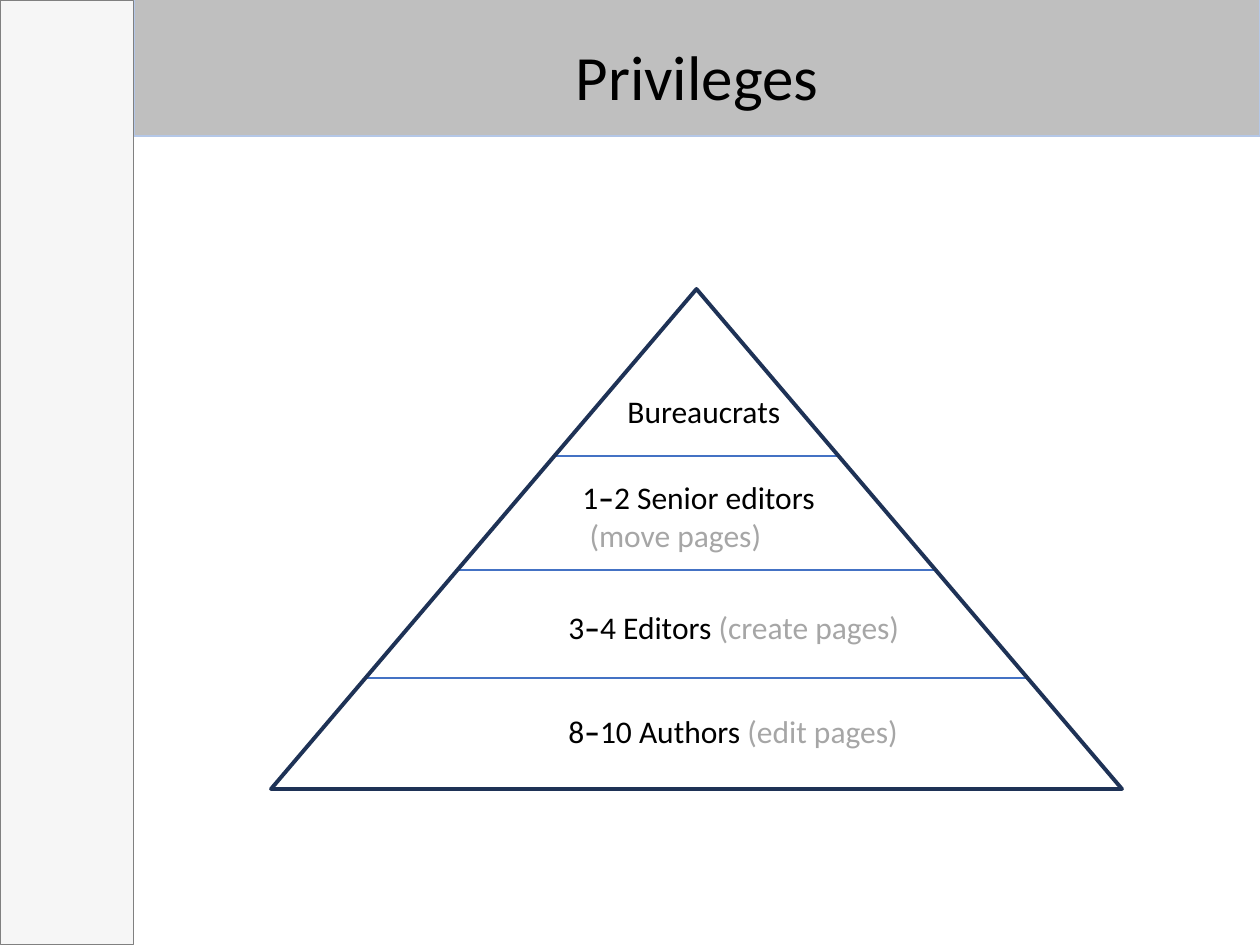
from dataclasses import dataclass

from lxml import etree
from pptx import Presentation
from pptx.dml.color import RGBColor
from pptx.enum.shapes import MSO_CONNECTOR, MSO_SHAPE
from pptx.enum.text import MSO_ANCHOR, MSO_AUTO_SIZE, PP_ALIGN
from pptx.oxml.ns import qn
from pptx.util import Emu, Pt

STRAIGHT = MSO_CONNECTOR.STRAIGHT
RECTANGLE, TRIANGLE = MSO_SHAPE.RECTANGLE, MSO_SHAPE.ISOSCELES_TRIANGLE


@dataclass(frozen=True)
class Theme:
    font: str = "Calibri"
    title_size: int = 36
    label_size: int = 18
    text: str = "000000"
    muted: str = "A6A6A6"
    sidebar: str = "F6F6F6"
    sidebar_edge: str = "808080"
    banner: str = "BFBFBF"
    banner_edge: str = "B4C7E7"
    divider: str = "4472C4"
    pyramid: str = "1E3256"


THEME = Theme()

TITLE = "Privileges"
# Each level: box (left, top, width, height), paragraphs of (role, permission)
LEVELS = [
    ((556, 706, 359, 50), [("8–10 Authors ", "(edit pages)")]),
    ((556, 602, 360, 50), [("3–4 Editors ", "(create pages)")]),
    ((570, 472, 261, 89), [("1–2 Senior editors", ""), (" ", "(move pages)")]),
    ((615, 386, 180, 50), [("Bureaucrats", "")]),
]
DIVIDER_TOPS = [678, 570, 456]
SIDEBAR = (0, 0, 134, 945)
BANNER = (134, -1, 1126, 137)
PYRAMID = (271, 289, 851, 500)


def px(length):
    return Emu(round(length * 914400 / 126))


def box(lengths):
    return [px(length) for length in lengths]


def rgb(colour):
    return RGBColor.from_string(colour)


def style(shape, fill, edge, width):
    if fill:
        shape.fill.solid()
        shape.fill.fore_color.rgb = rgb(fill)
    else:
        shape.fill.background()
    shape.line.color.rgb = rgb(edge)
    shape.line.width = Pt(width)


def add_block(slide, kind, lengths, fill, edge, width):
    shape = slide.shapes.add_shape(kind, *box(lengths))
    shape.shadow.inherit = False
    style(shape, fill, edge, width)


def add_title(slide):
    title = slide.shapes.title
    title.left, title.top, title.width, title.height = box(BANNER)
    style(title, THEME.banner, THEME.banner_edge, 0.75)
    frame = title.text_frame
    frame.text = TITLE
    frame.auto_size = MSO_AUTO_SIZE.NONE
    frame.vertical_anchor = MSO_ANCHOR.MIDDLE
    heading = frame.paragraphs[0]
    heading.alignment = PP_ALIGN.CENTER
    heading.line_spacing = 1.2
    heading.font.name = THEME.font
    heading.font.size = Pt(THEME.title_size)
    heading.font.color.rgb = rgb(THEME.text)


def add_divider(slide, y):
    """Draw a level line from one slanted side of the pyramid to the other."""
    left, top, width, height = PYRAMID
    centre = left + width / 2
    half = (y - top) / height * width / 2
    divider = slide.shapes.add_connector(
        STRAIGHT, px(centre - half), px(y), px(centre + half), px(y))
    divider.line.color.rgb = rgb(THEME.divider)
    divider.line.width = Pt(1.5)
    etree.SubElement(divider._element.spPr, qn("a:effectLst"))


def add_run(paragraph, text, colour, bold=False):
    if text:
        run = paragraph.add_run()
        run.text = text
        run.font.color.rgb = rgb(colour)
        run.font.bold = bold


def add_level(slide, lengths, lines):
    frame = slide.shapes.add_textbox(*box(lengths)).text_frame
    frame.word_wrap = False
    frame.auto_size = MSO_AUTO_SIZE.SHAPE_TO_FIT_TEXT
    for index, (role, permission) in enumerate(lines):
        paragraph = frame.add_paragraph() if index else frame.paragraphs[0]
        paragraph.font.name = THEME.font
        paragraph.font.size = Pt(THEME.label_size)
        low, dash, rest = role.partition("–")
        add_run(paragraph, low, THEME.text)
        add_run(paragraph, dash, THEME.text, bold=True)
        add_run(paragraph, rest, THEME.text)
        add_run(paragraph, permission, THEME.muted)


def main():
    deck = Presentation()
    deck.slide_width, deck.slide_height = px(1260), px(945)
    slide = deck.slides.add_slide(deck.slide_layouts.get_by_name("Title Only"))
    add_title(slide)
    add_block(slide, RECTANGLE, SIDEBAR, THEME.sidebar, THEME.sidebar_edge, 0.5)
    for y in DIVIDER_TOPS:
        add_divider(slide, y)
    for lengths, lines in LEVELS:
        add_level(slide, lengths, lines)
    add_block(slide, TRIANGLE, PYRAMID, None, THEME.pyramid, 2.25)
    deck.save("out.pptx")


if __name__ == "__main__":
    main()
